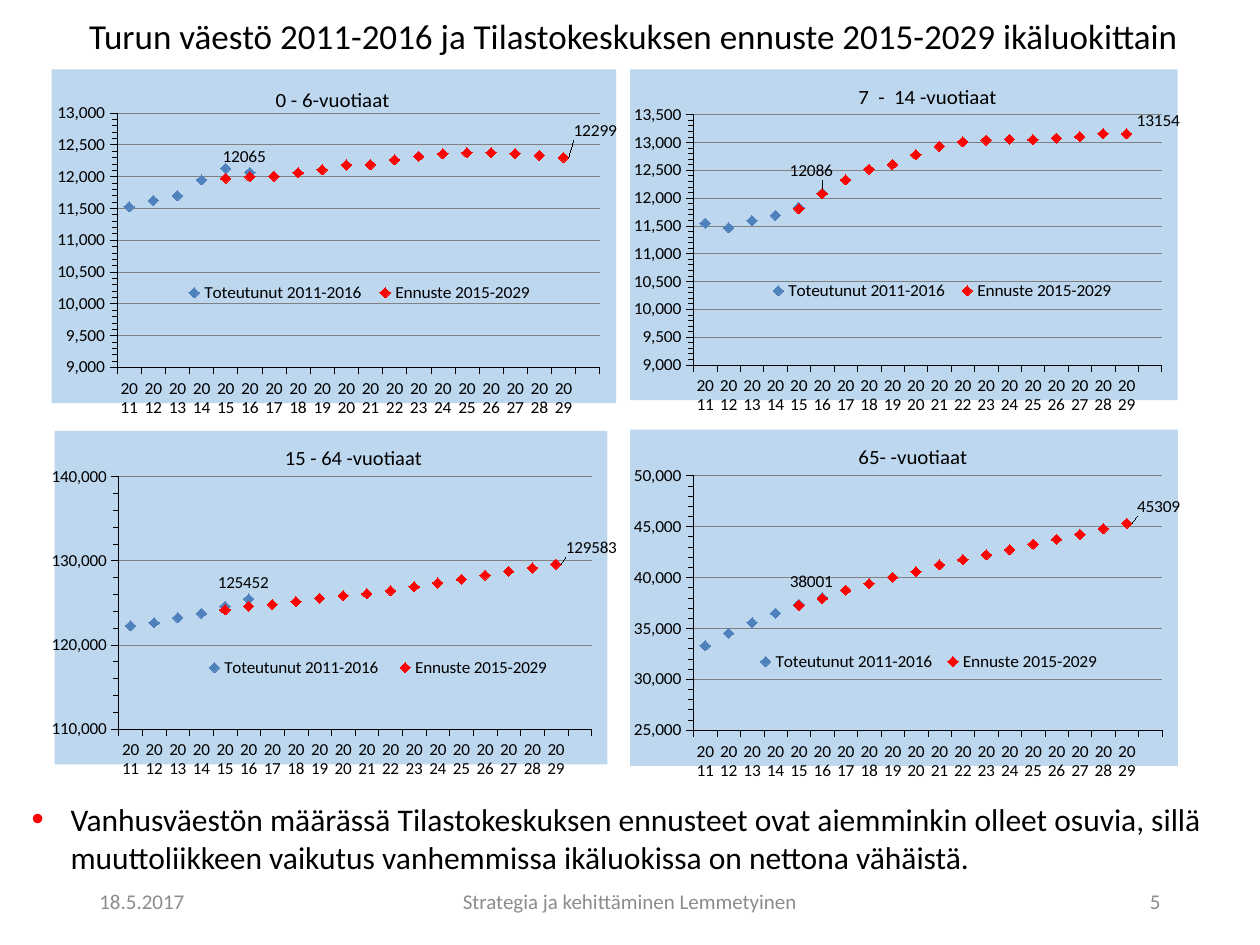
from dataclasses import dataclass

from lxml import etree
from pptx import Presentation
from pptx import util as u
from pptx.chart.data import CategoryChartData
from pptx.dml.color import RGBColor
from pptx.enum import chart as ch, dml, text
from pptx.oxml import parse_xml
from pptx.oxml.ns import nsdecls, qn

Inches, Pt = u.Inches, u.Pt


@dataclass(frozen=True)
class Theme:
    font: str = "Calibri"
    ink: str = "000000"
    muted: str = "8C8C8C"
    accent: str = "FF0000"
    actual: str = "4F81BD"
    panel: str = "BDD7EE"
    grid: str = "808080"
    title: int = 20
    body: int = 18
    footer: int = 12
    chart_title: int = 12
    chart: int = 10


T = Theme()
YEARS = [str(y) for y in range(2011, 2030)] + [""]  # empty slot leaves room for the last label
FORECAST_START = 4
LAST_ACTUAL, LAST_FORECAST = 5, 18
PLOT_BOX = (0.116, 0.137, 0.855, 0.757)

# box, title, title place, axis (min, max, major, minor), legend place, label shifts, values
PANELS = [
    dict(box=(0.41, 0.55, 4.49, 2.76), title="0 - 6-vuotiaat", title_at=(0.39, 0.04),
         axis=(9000, 13000, 500, 100), legend=(0.22, 0.64, 0.65, 0.06),
         plot=(0.116, 0.131, 0.855, 0.762), shifts=((-0.01, 0.01), (0, -0.08)),
         actual=[11523, 11623, 11699, 11947, 12128, 12065],
         forecast=[11970, 11997, 12006, 12058, 12105, 12182, 12188, 12263, 12319,
                   12356, 12373, 12375, 12361, 12334, 12299]),
    dict(box=(5, 0.55, 4.37, 2.74), title="7  -  14 -vuotiaat", title_at=(0.41, 0.03),
         axis=(9000, 13500, 500, 100), legend=(0.24, 0.64, 0.66, 0.06),
         plot=PLOT_BOX, shifts=((-0.02, -0.01), (0, -0.04)),
         actual=[11548, 11466, 11595, 11686, 11833, 12086],
         forecast=[11804, 12078, 12324, 12517, 12602, 12777, 12930, 13010, 13040,
                   13055, 13048, 13077, 13104, 13158, 13154]),
    dict(box=(0.41, 3.42, 4.49, 2.76), title="15 - 64 -vuotiaat", title_at=(0.41, 0.03),
         axis=(110000, 140000, 10000, 2000), legend=(0.25, 0.68, 0.67, 0.06),
         plot=PLOT_BOX, shifts=((-0.01, 0.01), (0, -0.05)),
         actual=[122269, 122616, 123216, 123719, 124586, 125452],
         forecast=[124142, 124584, 124801, 125131, 125528, 125839, 126065, 126431,
                   126892, 127346, 127788, 128277, 128741, 129122, 129583]),
    dict(box=(5, 3.41, 4.37, 2.78), title="65- -vuotiaat", title_at=(0.41, 0.03),
         axis=(25000, 50000, 5000, 1000), legend=(0.22, 0.66, 0.65, 0.06),
         plot=PLOT_BOX, shifts=((-0.02, 0.01), (0, -0.05)),
         actual=[33290, 34520, 35562, 36472, 37361, 38001],
         forecast=[37275, 37929, 38751, 39393, 40020, 40558, 41234, 41744, 42217,
                   42722, 43274, 43743, 44238, 44790, 45309]),
]


def rgb(value):
    return RGBColor.from_string(value)


def style(font, size, color=T.ink):
    font.name, font.size, font.bold = T.font, Pt(size), False
    font.color.rgb = rgb(color)


def place(sp, box):
    sp.left, sp.top, sp.width, sp.height = (Inches(v) for v in box)


def write(sp, words, size, color=T.ink, align=text.PP_ALIGN.LEFT,
          anchor=text.MSO_ANCHOR.MIDDLE):
    tf = sp.text_frame
    tf.text = words
    tf.word_wrap = True
    tf.auto_size = text.MSO_AUTO_SIZE.NONE
    tf.vertical_anchor = anchor
    p = tf.paragraphs[0]
    p.alignment = align
    style(p.runs[0].font, size, color)
    return p


def manual_layout(x, y, w=None, h=None, mode="edge", inner=False):
    parts = ['<c:layoutTarget val="inner"/>'] if inner else []
    if mode == "edge":
        parts += ['<c:xMode val="edge"/>', '<c:yMode val="edge"/>']
    sizes = zip("xywh", (x, y, w, h))
    parts += [f'<c:{k} val="{v}"/>' for k, v in sizes if v is not None]
    return parse_xml(f'<c:layout {nsdecls("c")}><c:manualLayout>{"".join(parts)}'
                     '</c:manualLayout></c:layout>')


def set_layout(parent, layout, after=None):
    """Put the layout after the named child, or first when no name is given."""
    for old in parent.findall(qn("c:layout")):
        parent.remove(old)
    found = parent.find(qn(after)) if after else None
    if found is None:
        parent.insert(0, layout)
    else:
        found.addnext(layout)


def add_axes(chart, low, high, major, minor):
    values, years = chart.value_axis, chart.category_axis
    values.minimum_scale, values.maximum_scale = low, high
    values.major_unit, values.minor_unit = major, minor
    values.minor_tick_mark = ch.XL_TICK_MARK.OUTSIDE
    values.tick_labels.number_format = "#,##0"
    values.tick_labels.number_format_is_linked = False
    grid = values.major_gridlines.format.line
    grid.width, grid.color.rgb = Pt(0.25), rgb(T.grid)
    grid.dash_style = dml.MSO_LINE.ROUND_DOT
    for axis in (values, years):
        axis.major_tick_mark = ch.XL_TICK_MARK.OUTSIDE
        axis.format.line.width = Pt(0.25)
        axis.format.line.color.rgb = rgb(T.ink)
        style(axis.tick_labels.font, T.chart)
    body = years._element.find(qn("c:txPr")).find(qn("a:bodyPr"))
    body.set("rot", "0")
    body.set("vert", "horz")


def style_series(ser, color, idx, position, shift):
    """Show diamonds without a line, and label one point."""
    ser.smooth = False
    ser.format.line.fill.background()
    ser.marker.style, ser.marker.size = ch.XL_MARKER_STYLE.DIAMOND, 6
    ser.marker.format.fill.solid()
    ser.marker.format.fill.fore_color.rgb = rgb(color)
    ser.marker.format.line.color.rgb = rgb(color)
    label = ser.points[idx].data_label
    style(label.font, T.chart)
    label.position = position
    for d in ser._element.iter(qn("c:dLbl")):
        set_layout(d, manual_layout(*shift, mode="factor"), "c:idx")


def add_panel(slide, panel):
    data = CategoryChartData(number_format="General")
    data.categories = YEARS
    data.add_series("Toteutunut 2011-2016",
                    panel["actual"] + [None] * (len(YEARS) - len(panel["actual"])))
    data.add_series("Ennuste 2015-2029",
                    [None] * FORECAST_START + panel["forecast"] + [None])
    chart = slide.shapes.add_chart(ch.XL_CHART_TYPE.LINE_MARKERS,
                                   *(Inches(v) for v in panel["box"]), data).chart
    style(chart.font, T.chart)
    chart.plots[0].vary_by_categories = False

    chart.chart_title.text_frame.text = panel["title"]
    style(chart.chart_title.text_frame.paragraphs[0].runs[0].font, T.chart_title)
    set_layout(chart.chart_title._element, manual_layout(*panel["title_at"]), "c:tx")

    chart.has_legend = True
    chart.legend.position = ch.XL_LEGEND_POSITION.BOTTOM
    chart.legend.include_in_layout = False
    style(chart.legend.font, T.chart)
    set_layout(chart.legend._element, manual_layout(*panel["legend"]), "c:legendPos")

    add_axes(chart, *panel["axis"])
    actual, forecast = chart.plots[0].series
    place_label = ch.XL_LABEL_POSITION
    style_series(actual, T.actual, LAST_ACTUAL, place_label.ABOVE, panel["shifts"][0])
    style_series(forecast, T.accent, LAST_FORECAST, place_label.RIGHT, panel["shifts"][1])

    plot_area = chart._chartSpace.chart.plotArea
    set_layout(plot_area, manual_layout(*panel["plot"], inner=True))
    fill = (f'<c:spPr {nsdecls("c", "a")}><a:solidFill><a:srgbClr val="{T.panel}"/>'
            '</a:solidFill><a:ln><a:noFill/></a:ln></c:spPr>')
    plot_area.append(parse_xml(fill))
    chart._chartSpace.chart.addnext(parse_xml(fill))


def add_title(slide, box):
    sp = slide.shapes.title
    place(sp, box)
    p = write(sp, "Turun väestö 2011-2016 ja Tilastokeskuksen ennuste 2015-2029 ikäluokittain",
              T.title, align=text.PP_ALIGN.CENTER, anchor=text.MSO_ANCHOR.BOTTOM)
    p.line_spacing = 0.9


def add_body(slide, box):
    sp = slide.placeholders[1]
    place(sp, box)
    p = write(sp, "Vanhusväestön määrässä Tilastokeskuksen ennusteet ovat aiemminkin olleet "
              "osuvia, sillä muuttoliikkeen vaikutus vanhemmissa ikäluokissa on nettona vähäistä.",
              T.body, anchor=text.MSO_ANCHOR.TOP)
    p.space_before = Pt(0)
    pr = p._p.get_or_add_pPr()
    pr.set("marL", str(Inches(0.31)))
    pr.set("indent", str(-Inches(0.31)))
    color = etree.SubElement(pr, qn("a:buClr"))
    etree.SubElement(color, qn("a:srgbClr"), val=T.accent)
    etree.SubElement(pr, qn("a:buSzPct"), val="110000")
    etree.SubElement(pr, qn("a:buFont"), typeface="Arial")
    etree.SubElement(pr, qn("a:buChar"), char="•")


def add_footer(slide, top, height):
    al = text.PP_ALIGN
    for left, width, words, align in (
            (0.69, 2.25, "18.5.2017", al.LEFT),
            (3.31, 3.38, "Strategia ja kehittäminen Lemmetyinen", al.CENTER),
            (7.06, 2.25, "5", al.RIGHT)):
        sp = slide.shapes.add_textbox(*(Inches(v) for v in (left, top, width, height)))
        write(sp, words, T.footer, T.muted, align)


def main():
    prs = Presentation()
    prs.slide_width, prs.slide_height = Inches(10), Inches(7.5)
    slide = prs.slides.add_slide(prs.slide_layouts[1])
    add_title(slide, (0.15, 0.03, 9.76, 0.47))
    add_body(slide, (0.15, 6.3, 9.85, 0.71))
    add_footer(slide, 6.95, 0.4)
    for panel in PANELS:
        add_panel(slide, panel)
    prs.save("out.pptx")


if __name__ == "__main__":
    main()
